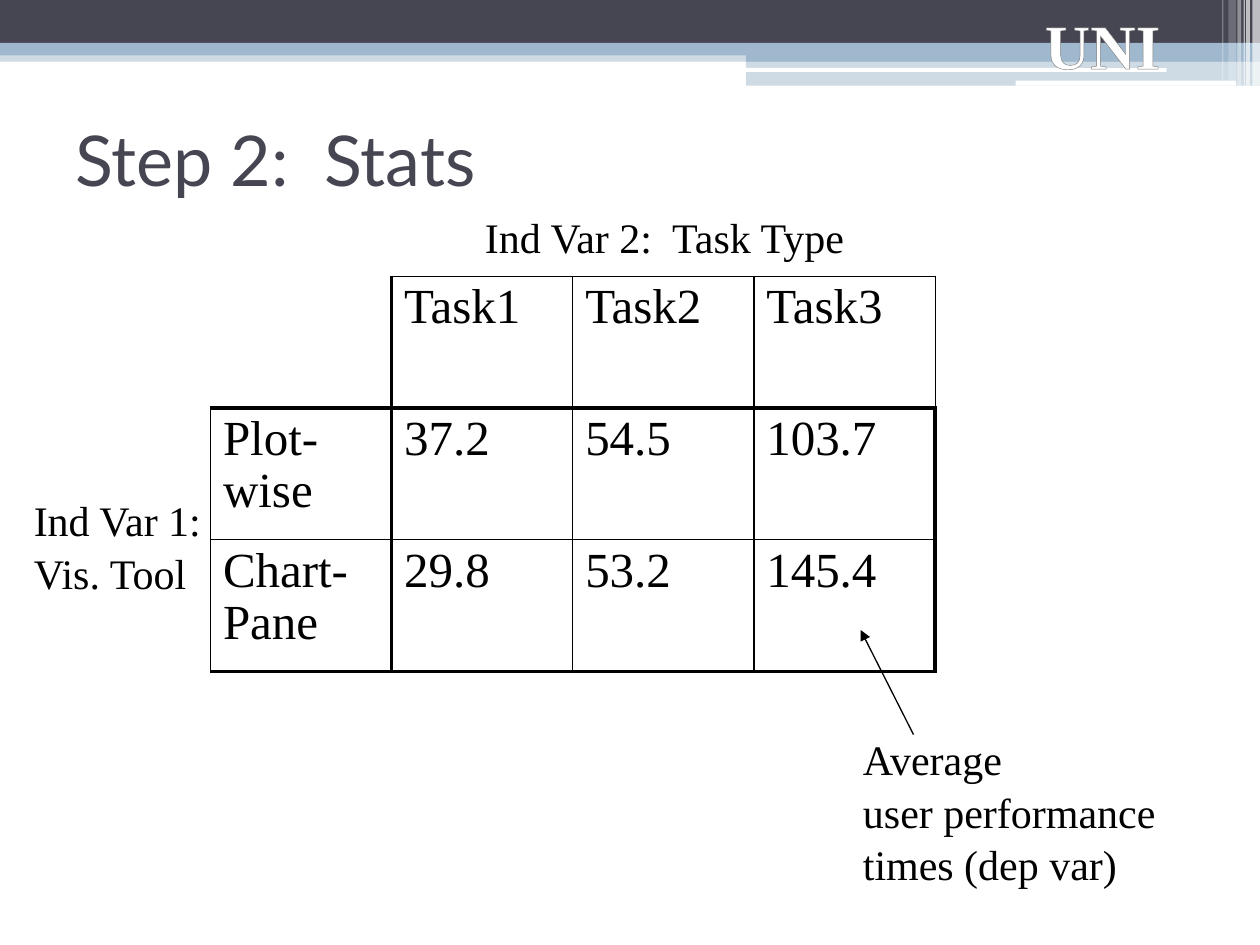
from pptx import Presentation
from pptx.dml.color import RGBColor
from pptx.enum.shapes import MSO_CONNECTOR as Connector, MSO_SHAPE as Shape
from pptx.enum.text import MSO_ANCHOR as Anchor, PP_ALIGN as Align
from pptx.oxml.ns import qn
from pptx.util import Inches, Pt
from lxml.etree import SubElement, Element

COLORS = {"dark": "464653", "blue": "9FB8CD", "white": "FFFFFF",
          "black": "000000", "outline": "7D7D7D"}
SERIF, SANS = "Times New Roman", "Lato"


def rgb(name):
    return RGBColor.from_string(COLORS[name])


def write(frame, text, size=24, font=SERIF, color="black", bold=False,
          align=Align.LEFT, anchor=Anchor.TOP, spacing=1.0):
    frame.word_wrap = True
    frame.vertical_anchor = anchor
    paragraph = frame.paragraphs[0]
    paragraph.text = text
    paragraph.alignment = align
    paragraph.line_spacing = spacing
    for run in paragraph.runs:
        run.font.size, run.font.name, run.font.bold = Pt(size), font, bold
        run.font.color.rgb = rgb(color)
    return paragraph


def solid_fill(parent, color):
    fill = SubElement(parent, qn("a:solidFill"))
    SubElement(fill, qn("a:srgbClr"), val=COLORS[color])


class SlideBuilder:
    """Draws styled elements on the current slide."""

    def __init__(self, slide):
        self.slide = slide
        self.shapes = slide.shapes

    def bar(self, box, color, opacity=100, kind=Shape.RECTANGLE):
        bar = self.shapes.add_shape(kind, *map(Inches, box))
        bar.shadow.inherit = False
        bar.line.fill.background()
        bar.fill.solid()
        bar.fill.fore_color.rgb = rgb(color)
        if opacity < 100:
            tone = bar._element.spPr.find(qn("a:solidFill"))[0]
            SubElement(tone, qn("a:alpha"), val=str(opacity * 1000))

    def text(self, box, text, **style):
        label = self.shapes.add_textbox(*map(Inches, box))
        return write(label.text_frame, text, **style)

    def outlined_text(self, box, text, **style):
        paragraph = self.text(box, text, **style)
        outline = Element(qn("a:ln"), w=str(Pt(0.83)))
        solid_fill(outline, "outline")
        paragraph.runs[0]._r.get_or_add_rPr().insert(0, outline)

    def border(self, cell, **widths):
        properties = cell._tc.get_or_add_tcPr()
        for side in "LRTB":
            width = widths[side]
            line = SubElement(properties, qn(f"a:ln{side}"), w=str(Pt(width)))
            if width:
                solid_fill(line, "black")
            else:
                SubElement(line, qn("a:noFill"))

    def table(self, box, rows, **style):
        thin, normal, thick = 0.25, 1, 2.25
        across = [thin, thick, normal, thick]
        down = [thin, thick, normal, normal, thick]
        grid = self.shapes.add_table(len(rows), len(rows[0]), *map(Inches, box)).table
        grid.first_row = grid.horz_banding = False
        for r, row in enumerate(rows):
            for c, value in enumerate(row):
                cell = grid.cell(r, c)
                header_end = r == 0 and c == len(row) - 1
                self.border(cell,
                            L=down[c] if r or c else 0,
                            R=thin if header_end else down[c + 1],
                            T=across[r] if r or c else 0,
                            B=across[r + 1])
                cell.fill.background()
                if value:
                    write(cell.text_frame, value, **style)

    def arrow(self, start, end, width=0.75):
        arrow = self.shapes.add_connector(Connector.STRAIGHT, *map(Inches, start + end))
        arrow.line.color.rgb = rgb("black")
        arrow.line.width = Pt(width)
        SubElement(arrow.line._get_or_add_ln(), qn("a:tailEnd"), type="triangle")
        SubElement(arrow._element.spPr, qn("a:effectLst"))


def main():
    deck = Presentation()
    deck.slide_width, deck.slide_height = Inches(10), Inches(7.5)
    page = SlideBuilder(deck.slides.add_slide(deck.slide_layouts[6]))

    for box, color, opacity in [
        ((0, 0.4, 10, 0.09), "blue", 50),
        ((0, 0, 10, 0.34), "dark", 100),
        ((0, 0.34, 10, 0.1), "blue", 100),
        ((5.92, 0.39, 4.08, 0.1), "blue", 100),
        ((5.92, 0.48, 4.08, 0.2), "blue", 50),
    ]:
        page.bar(box, color, opacity)
    for box in [(5.91, 0.54, 3.35, 0.03), (8.06, 0.64, 1.75, 0.04)]:
        page.bar(box, "white", kind=Shape.ROUNDED_RECTANGLE)
    for left, width, height, opacity in [
        (9.94, 0.06, 0.68, 65), (9.89, 0.03, 0.68, 65), (9.87, 0.01, 0.68, 60),
        (9.82, 0.03, 0.68, 40), (9.75, 0.06, 0.64, 20), (9.7, 0.01, 0.64, 30),
    ]:
        page.bar((left, 0, width, height), "white", opacity)

    page.outlined_text((8, 0, 1.5, 0.71), "UNI", size=36, color="white",
                       bold=True, align=Align.CENTER)
    page.text((0.5, 0.67, 9, 1.17), "Step 2:  Stats", size=40, font=SANS,
              color="dark", anchor=Anchor.MIDDLE)
    page.table((1.67, 2.19, 5.75, 3.14), [
        ["", "Task1", "Task2", "Task3"],
        ["Plot-wise", "37.2", "54.5", "103.7"],
        ["Chart-Pane", "29.8", "53.2", "145.4"],
    ], size=28, spacing=0.96)
    for box, label in [
        ((0.17, 3.86, 1.67, 0.9), "Ind Var 1: Vis. Tool"),
        ((3.75, 1.61, 3.42, 0.5), "Ind Var 2:  Task Type"),
        ((6.75, 5.75, 2.75, 1.3), "Average \vuser performance times (dep var)"),
    ]:
        page.text(box, label, spacing=1.05)
    page.arrow((7.25, 5.83), (6.83, 5))

    deck.save("out.pptx")


if __name__ == "__main__":
    main()
